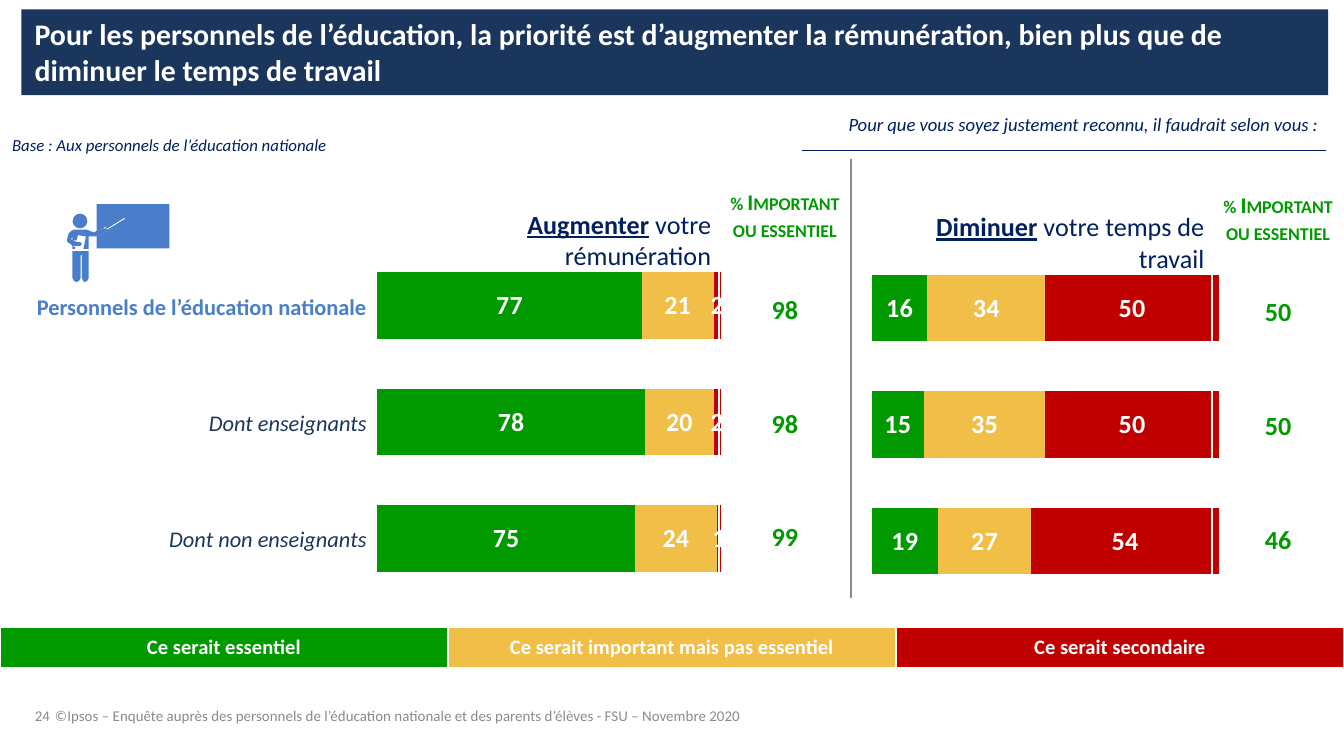
from dataclasses import dataclass

from lxml.etree import SubElement
from pptx import Presentation
from pptx.chart.data import CategoryChartData
from pptx.dml.color import RGBColor
from pptx.enum.chart import XL_CHART_TYPE
from pptx.enum.shapes import MSO_CONNECTOR, MSO_SHAPE
from pptx.enum.text import MSO_ANCHOR, PP_ALIGN
from pptx.oxml import parse_xml
from pptx.oxml.ns import nsdecls, qn
from pptx.util import Pt


@dataclass(frozen=True)
class Theme:
    font: str = "Calibri"
    white: str = "FFFFFF"
    dark: str = "222223"
    navy: str = "1B365D"
    ink: str = "002060"
    blue: str = "4A7ECA"
    grey: str = "888B8D"
    green: str = "009900"
    yellow: str = "F1BE48"
    red: str = "C00000"
    title: int = 16
    heading: int = 14
    label: int = 12
    legend: int = 11
    question: int = 10
    base: int = 9
    footer: int = 8


T = Theme()
SCALE = (T.green, T.yellow, T.red)

# Pictogram outlines, in hundredths of an inch
ICON_UNIT = 0.72
BOARD = [(28, 17), (30, 18), (43, 10), (43, 11), (30, 19), (29, 21), (22, 24),
         (22, 33), (76, 33), (76, 0), (22, 0), (22, 20), (27, 18)]
TEACHER = [(3, 30), (4, 31), (10, 31), (11, 29), (9, 28), (7, 28), (4, 27), (3, 26),
           (4, 24), (4, 27), (7, 27), (8, 23), (14, 24), (13, 29), (12, 34), (6, 34),
           (6, 32), (4, 31), (4, 55), (5, 57), (7, 58), (9, 57), (10, 55), (10, 38),
           (11, 38), (11, 55), (12, 57), (13, 58), (15, 57), (16, 55), (16, 24),
           (22, 24), (29, 21), (30, 19), (30, 18), (27, 18), (22, 20), (20, 21),
           (17, 20), (15, 19), (5, 19), (3, 20), (1, 22), (0, 26), (0, 28)]


def rgb(color):
    return RGBColor.from_string(color)


def pts(*values):
    return [Pt(v) for v in values]


def add_run(p, text, size, color, bold=False, italic=False, underline=False):
    r = p.add_run()
    r.text = text
    f = r.font
    f.name, f.size, f.color.rgb = T.font, Pt(size), rgb(color)
    f.bold, f.italic, f.underline = bold, italic, underline
    return r


def set_frame(tf, anchor=MSO_ANCHOR.TOP, inset=None, align=PP_ALIGN.LEFT, wrap=True):
    tf.word_wrap, tf.vertical_anchor = wrap, anchor
    if inset is not None:
        tf.margin_left = tf.margin_right = tf.margin_top = tf.margin_bottom = Pt(inset)
    p = tf.paragraphs[0]
    p.alignment = align
    return p


def add_text(s, box, **options):
    return set_frame(s.shapes.add_textbox(*pts(*box)).text_frame, **options)


def add_line(s, ends, color, width):
    cx = s.shapes.add_connector(MSO_CONNECTOR.STRAIGHT, *pts(*ends))
    cx.line.color.rgb, cx.line.width = rgb(color), Pt(width)
    SubElement(cx._element.spPr, qn("a:effectLst"))


def add_grid(s, box, heights, columns=1):
    """Plain table without fills; returns its cells in reading order."""
    table = s.shapes.add_table(len(heights), columns, *pts(*box)).table
    table.first_row = table.horz_banding = False
    for col in table.columns:
        col.width = Pt(box[2] / columns)
    for row, height in zip(table.rows, heights):
        row.height = Pt(height)
    cells = list(table.iter_cells())
    for cell in cells:
        cell.fill.background()
        cell.vertical_anchor = MSO_ANCHOR.MIDDLE
    return cells


def fill_cell(cell, text, size, color, align=PP_ALIGN.CENTER, **style):
    p = cell.text_frame.paragraphs[0]
    p.alignment = align
    return add_run(p, text, size, color, **style)


def add_title(s, box):
    sp = s.shapes.add_shape(MSO_SHAPE.RECTANGLE, *pts(*box))
    sp.shadow.inherit = False
    sp.fill.solid()
    sp.fill.fore_color.rgb = rgb(T.navy)
    sp.line.fill.background()
    add_run(set_frame(sp.text_frame), "Pour les personnels de l’éducation, la priorité est d’augmenter "
            "la rémunération, bien plus que de diminuer le temps de travail", T.title, T.white, bold=True)


def add_intro(s, box):
    x, y, w, h = box
    p = add_text(s, (x + 441, y, 268, 35), anchor=MSO_ANCHOR.MIDDLE)
    add_run(p, "Pour que vous soyez justement reconnu, il faudrait selon vous :",
            T.question, T.ink, italic=True)
    add_line(s, (x + 423, y + 31.6, x + w, y + 31.6), T.ink, 0.5)
    p = add_text(s, (x, y + h - 11, 172, 11), inset=0)
    add_run(p, "Base : Aux personnels de l’éducation nationale", T.base, T.ink, italic=True)


def add_icon(s, box):
    x, y = box
    grp = s.shapes.add_group_shape()
    parts = []
    for outline in (BOARD, TEACHER):
        fb = grp.shapes.build_freeform(*outline[0], scale=Pt(1) * ICON_UNIT)
        fb.add_line_segments(outline[1:], close=True)
        parts.append(fb.convert_to_shape(*pts(x, y)))
    parts.append(grp.shapes.add_shape(MSO_SHAPE.OVAL, *pts(
        x + 4 * ICON_UNIT, y + 7 * ICON_UNIT, 11 * ICON_UNIT, 11 * ICON_UNIT)))
    for sp in parts:
        sp.shadow.inherit = False
        sp.fill.solid()
        sp.fill.fore_color.rgb = rgb(T.blue)
        sp.line.fill.background()


def add_row_labels(s, box):
    cells = add_grid(s, box, [box[3] / 3] * 3)
    fill_cell(cells[0], "Personnels de l’éducation nationale", T.label, T.blue, PP_ALIGN.RIGHT, bold=True)
    for cell, text in zip(cells[1:], ("Dont enseignants", "Dont non enseignants")):
        fill_cell(cell, text, T.label, T.navy, PP_ALIGN.RIGHT, italic=True)


def add_bars(s, box, series):
    data = CategoryChartData()
    data.categories = ["1", "2", "3"]
    for i, values in enumerate(series, 1):
        data.add_series(f"Series {i}", values)
    chart = s.shapes.add_chart(XL_CHART_TYPE.BAR_STACKED_100, *pts(*box), data).chart
    chart.has_legend = chart.has_title = False
    f = chart.font
    f.name, f.size, f.color.rgb = T.font, Pt(T.question), rgb(T.dark)
    chart.category_axis.reverse_order = True
    chart.value_axis.has_major_gridlines = False
    chart.value_axis.maximum_scale = 1
    chart.category_axis.visible = chart.value_axis.visible = False
    plot = chart.plots[0]
    plot.gap_width, plot.overlap, plot.vary_by_categories = 75, 100, False
    for ser, color in zip(plot.series, SCALE):
        ser.format.fill.solid()
        ser.format.fill.fore_color.rgb = rgb(color)
        labels = ser.data_labels
        labels.show_value = True
        f = labels.font
        f.name, f.size, f.bold, f.color.rgb = T.font, Pt(T.heading), True, rgb(T.white)
    # Fixed inner plot area
    area = chart._chartSpace.chart.plotArea
    for old in area.findall(qn("c:layout")):
        area.remove(old)
    sizes = "".join(f'<c:{k} val="{v}"/>' for k, v in (("x", 0.283), ("y", 0), ("w", 0.717), ("h", 0.997)))
    modes = '<c:layoutTarget val="inner"/><c:xMode val="edge"/><c:yMode val="edge"/>'
    area.insert(0, parse_xml(f'<c:layout {nsdecls("c")}><c:manualLayout>{modes}{sizes}'
                             '</c:manualLayout></c:layout>'))


def add_panel(s, box, key_word, rest, series):
    """Heading, stacked bars and the column of summed scores."""
    x, y, w, h = box
    add_bars(s, (x, y + 36.6, 259.2, 188), series)
    p = add_text(s, (x + 67.7, y + 12.2, 190.8, 24.5), align=PP_ALIGN.RIGHT)
    add_run(p, key_word, T.heading, T.ink, bold=True, underline=True)
    add_run(p, rest, T.heading, T.ink)
    cells = add_grid(s, (x + w - 70.6, y, 70.6, h), [39.6] + [(h - 39.6) / 3] * 3)
    for cell in cells:
        cell.margin_left = cell.margin_right = cell.margin_bottom = 0
        cell.margin_top = Pt(0.72)
    r = fill_cell(cells[0], "% Important ou essentiel", T.label, T.green, bold=True)
    r.font._element.set("cap", "small")
    for cell, essential, important in zip(cells[1:], *series[:2]):
        fill_cell(cell, str(essential + important), T.heading, T.green, bold=True)


def add_legend(s, box):
    texts = ("Ce serait essentiel", "Ce serait important mais pas essentiel", "Ce serait secondaire")
    for cell, text, color in zip(add_grid(s, box, [box[3]], 3), texts, SCALE):
        cell.fill.solid()
        cell.fill.fore_color.rgb = rgb(color)
        fill_cell(cell, text, T.legend, T.white, bold=True)


def add_footer(s, box):
    x, y, w, h = box
    p = add_text(s, (x, y, 24.5, 18.7), anchor=MSO_ANCHOR.BOTTOM, inset=0, wrap=False)
    p.line_spacing = 0.85
    add_run(p, "24", T.footer, T.grey)
    p = add_text(s, (x + 3.6, y + 5.8, w - 3.6, h - 5.8))
    add_run(p, "©Ipsos – Enquête auprès des personnels de l’éducation nationale et des "
            "parents d’élèves - FSU – Novembre 2020", T.footer, T.grey)


def main():
    prs = Presentation()
    prs.slide_width, prs.slide_height = pts(720, 405)
    s = prs.slides.add_slide(prs.slide_layouts[6])
    add_title(s, (11.5, 5, 700, 46))
    add_intro(s, (6.5, 49, 704, 34))
    add_icon(s, (36, 109.4))
    add_row_labels(s, (-13, 134, 216.7, 186.5))
    add_panel(s, (129.6, 95.8, 326.2, 222.5), "Augmenter", " votre rémunération",
              [(77, 78, 75), (21, 20, 24), (2, 2, 1)])
    add_panel(s, (393.8, 97.2, 326.2, 222.5), "Diminuer", " votre temps de travail",
              [(16, 15, 19), (34, 35, 27), (50, 50, 54)])
    add_line(s, (455.8, 85, 455.8, 320.4), T.grey, 1)
    add_legend(s, (0, 336.2, 720, 21.6))
    add_footer(s, (18.7, 369.4, 535.7, 20.2))
    prs.save("out.pptx")


if __name__ == "__main__":
    main()
